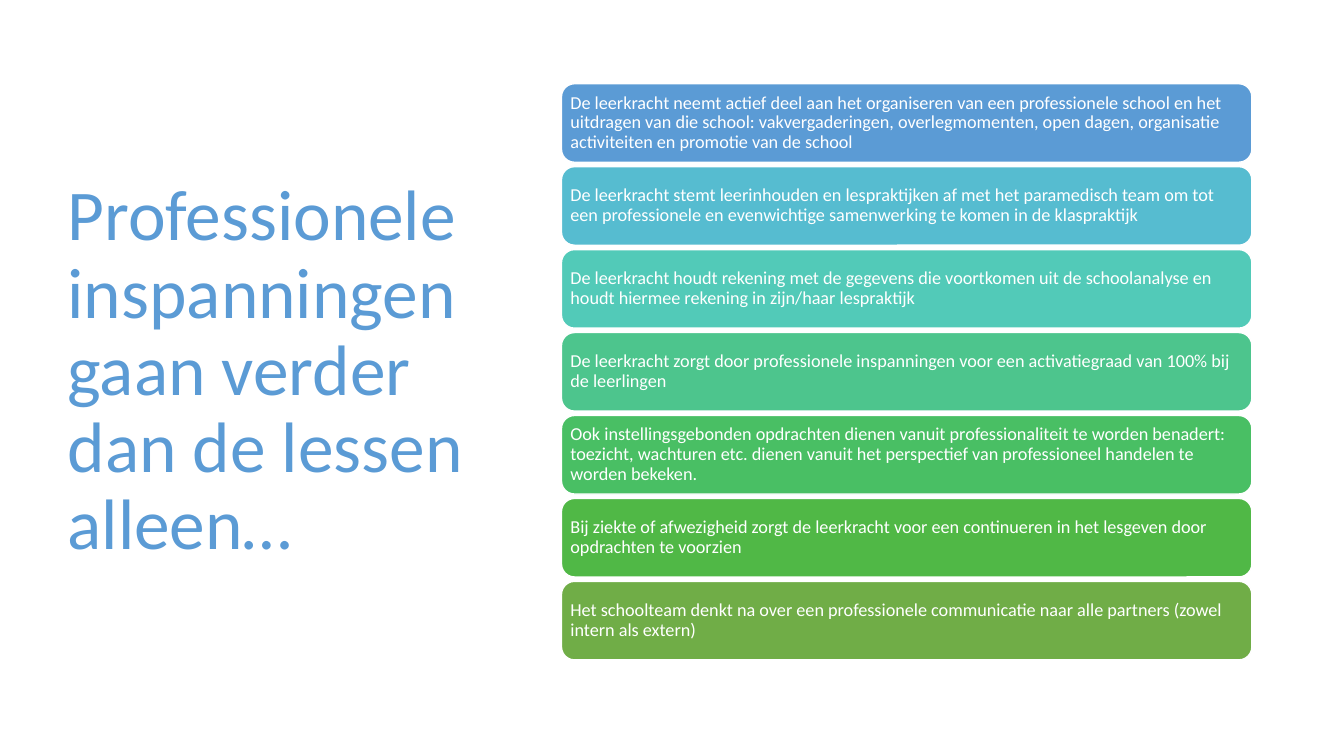
from pptx import Presentation
from pptx.dml.color import RGBColor
from pptx.enum.shapes import MSO_SHAPE
from pptx.enum.text import MSO_ANCHOR, MSO_AUTO_SIZE, PP_ALIGN
from pptx.util import Cm, Pt

ROUNDED = MSO_SHAPE.ROUNDED_RECTANGLE
MIDDLE = MSO_ANCHOR.MIDDLE
LEFT = PP_ALIGN.LEFT
NO_FIT = MSO_AUTO_SIZE.NONE

COLORS = {
    "white": "FFFFFF",
    "blue": "5B9BD5",
    "cyan": "56BCD0",
    "turquoise": "52CAB8",
    "mint": "4DC58D",
    "emerald": "49BF64",
    "green": "50B846",
    "olive": "70AD47",
}

TITLE = "Professionele inspanningen gaan verder dan de lessen alleen…"

EFFORTS = [
    ("blue", "De leerkracht neemt actief deel aan het organiseren van een "
     "professionele school en het uitdragen van die school: vakvergaderingen, "
     "overlegmomenten, open dagen, organisatie activiteiten en promotie van de school"),
    ("cyan", "De leerkracht stemt leerinhouden en lespraktijken af met het "
     "paramedisch team om tot een professionele en evenwichtige samenwerking "
     "te komen in de klaspraktijk"),
    ("turquoise", "De leerkracht houdt rekening met de gegevens die voortkomen uit "
     "de schoolanalyse en houdt hiermee rekening in zijn/haar lespraktijk"),
    ("mint", "De leerkracht zorgt door professionele inspanningen voor een "
     "activatiegraad van 100% bij de leerlingen"),
    ("emerald", "Ook instellingsgebonden opdrachten dienen vanuit professionaliteit "
     "te worden benadert: toezicht, wachturen etc. dienen vanuit het perspectief "
     "van professioneel handelen te worden bekeken."),
    ("green", "Bij ziekte of afwezigheid zorgt de leerkracht voor een continueren "
     "in het lesgeven door opdrachten te voorzien"),
    ("olive", "Het schoolteam denkt na over een professionele communicatie naar "
     "alle partners (zowel intern als extern)"),
]


def rgb(name):
    return RGBColor.from_string(COLORS[name])


class SlideBuilder:
    font = "Calibri"
    inset = Cm(0.13)

    def __init__(self, prs):
        self.s = prs.slides.add_slide(prs.slide_layouts[5])

    def set_text(self, sp, text, size, color):
        tf = sp.text_frame
        tf.text = text
        tf.word_wrap = True
        tf.auto_size = NO_FIT
        tf.vertical_anchor = MIDDLE
        p = tf.paragraphs[0]
        p.alignment = LEFT
        p.line_spacing = 0.9
        p.font.name = self.font
        p.font.size = Pt(size)
        p.font.color.rgb = rgb(color)
        return tf

    def title(self, text, x, y, w, h):
        sp = self.s.shapes.title
        sp.left, sp.top, sp.width, sp.height = Cm(x), Cm(y), Cm(w), Cm(h)
        self.set_text(sp, text, 51, "blue")

    def bar(self, text, color, x, y, w, h):
        sp = self.s.shapes.add_shape(ROUNDED, Cm(x), Cm(y), Cm(w), Cm(h))
        sp.shadow.inherit = False
        sp.fill.solid()
        sp.fill.fore_color.rgb = rgb(color)
        sp.line.color.rgb = rgb("white")
        sp.line.width = Pt(1)
        tf = self.set_text(sp, text, 13, "white")
        tf.margin_left = tf.margin_right = self.inset
        tf.margin_top = tf.margin_bottom = self.inset


def main():
    prs = Presentation()
    prs.slide_width, prs.slide_height = Cm(33.87), Cm(19.05)
    slide = SlideBuilder(prs)

    # Title on the left
    slide.title(TITLE, 1.45, 1.73, 10.57, 15.29)

    # Stack of bars on the right
    top, pitch = 2.11, 2.09
    for i, (color, text) in enumerate(EFFORTS):
        slide.bar(text, color, 14.15, top + i * pitch, 17.4, 1.98)

    prs.save("out.pptx")


if __name__ == "__main__":
    main()
